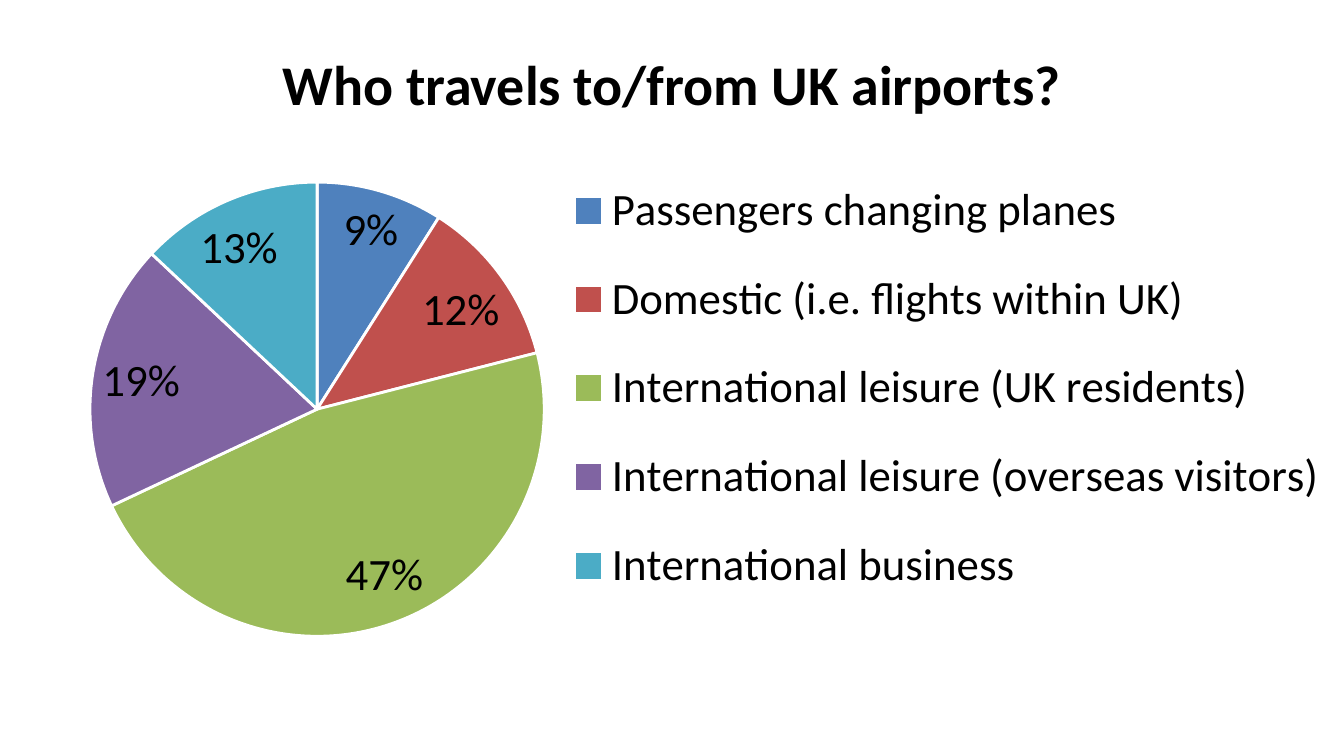
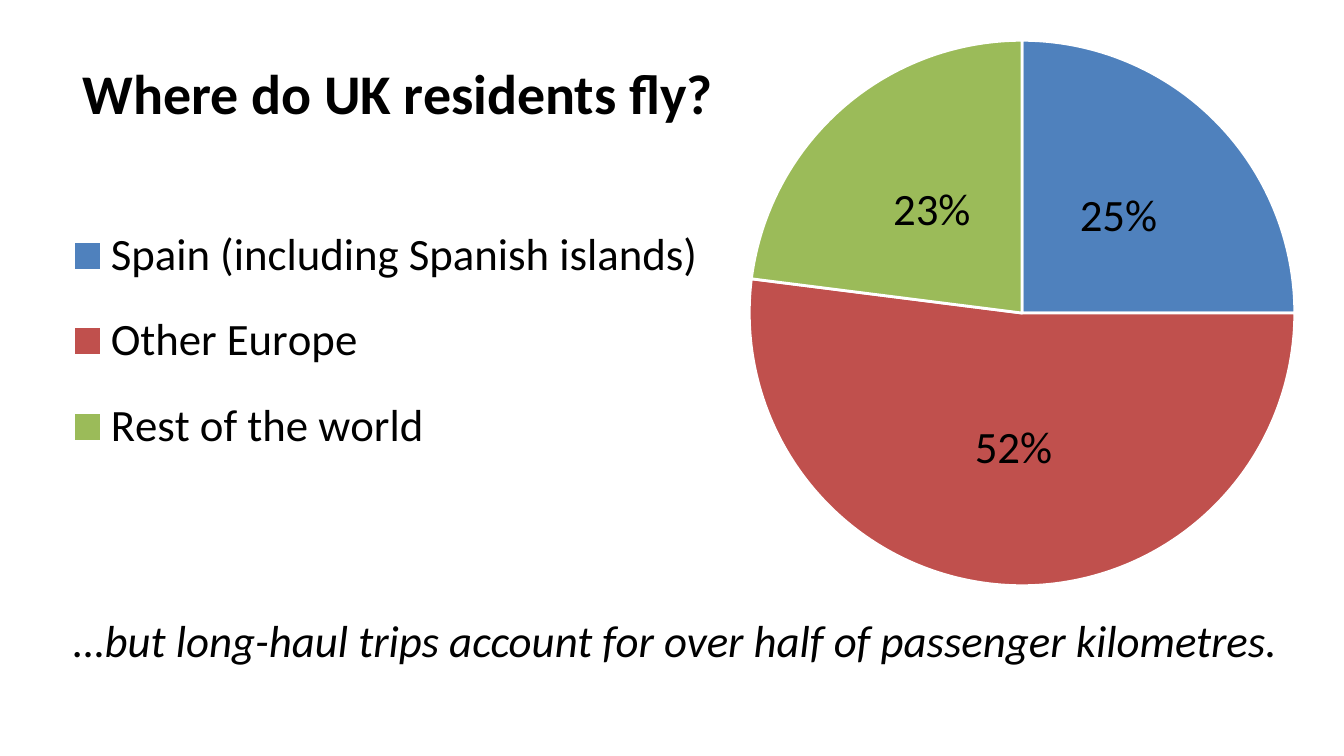
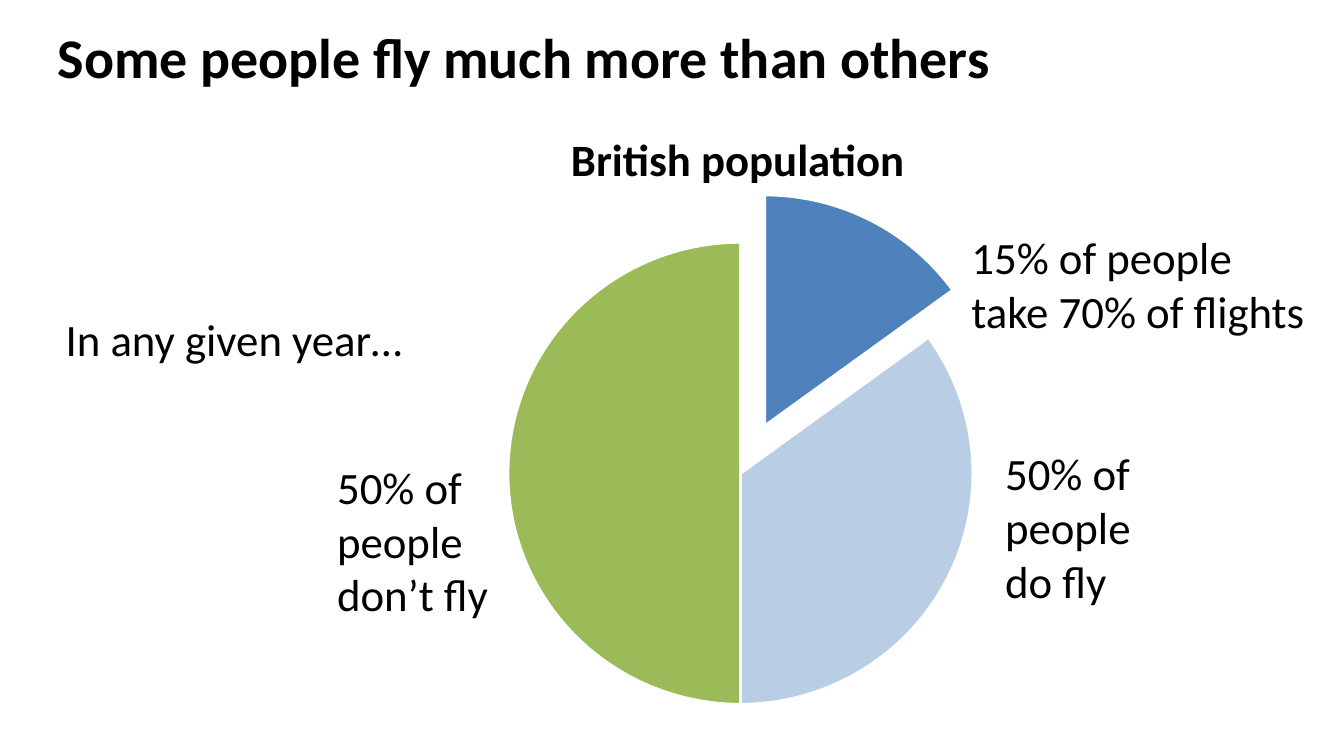
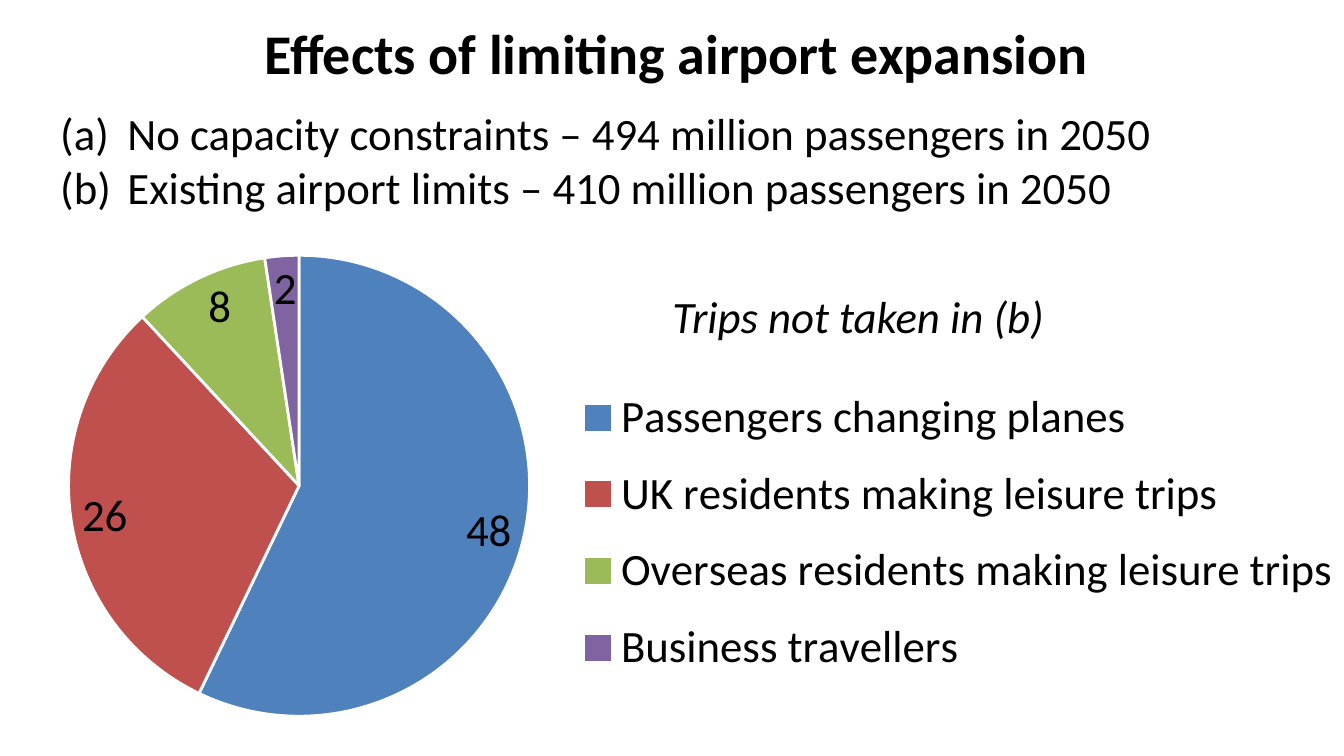
import pptx
import pptx.chart.data
import pptx.dml.color
import pptx.enum.chart
import pptx.enum.text
import pptx.oxml
import pptx.oxml.ns
import pptx.util
from lxml import etree

Inches = pptx.util.Inches
Pt = pptx.util.Pt
CENTER = pptx.enum.text.PP_ALIGN.CENTER
LEGEND = pptx.enum.chart.XL_LEGEND_POSITION
LABEL = pptx.enum.chart.XL_LABEL_POSITION

FONT = "Calibri"
BLACK, WHITE = "000000", "FFFFFF"
PALETTE = ["4F81BD", "C0504D", "9BBB59", "8064A2", "4BACC6"]
BODY, TITLE = 24, 30


def rgb(value):
    return pptx.dml.color.RGBColor.from_string(value)


def style_font(font, size=BODY, bold=False, italic=False):
    font.name = FONT
    font.size = Pt(size)
    font.bold = bold
    font.italic = italic
    font.color.rgb = rgb(BLACK)


def add_text(s, box, lines, align=None, numbered=False, **style):
    """Wrapped text box, one paragraph per line; numbered gives (a), (b)..."""
    tf = s.shapes.add_textbox(*map(Inches, box)).text_frame
    tf.word_wrap = True
    for i, line in enumerate(lines):
        p = tf.paragraphs[0] if i == 0 else tf.add_paragraph()
        p.alignment = align
        if numbered:
            pPr = p._p.get_or_add_pPr()
            pPr.set("marL", str(Inches(0.5)))
            pPr.set("indent", str(Inches(-0.5)))
            bullet = etree.SubElement(pPr, pptx.oxml.ns.qn("a:buAutoNum"))
            bullet.set("type", "alphaLcParenBoth")
        r = p.add_run()
        r.text = line
        style_font(r.font, **style)
    return tf


def add_title(s, box, text):
    tf = add_text(s, box, [text], CENTER, size=TITLE, bold=True)
    tf.vertical_anchor = pptx.enum.text.MSO_ANCHOR.MIDDLE


def set_layout(parent, index, chart_box, box, inner=False):
    """Fix a chart part at box, given in slide inches."""
    qn = pptx.oxml.ns.qn
    old = parent.find(qn("c:layout"))
    if old is not None:
        parent.remove(old)
    layout = etree.Element(qn("c:layout"))
    manual = etree.SubElement(layout, qn("c:manualLayout"))
    left, top, width, height = chart_box
    values = {
        "x": (box[0] - left) / width,
        "y": (box[1] - top) / height,
        "w": box[2] / width,
        "h": box[3] / height,
    }
    settings = [("layoutTarget", "inner")] if inner else []
    settings += [("xMode", "edge"), ("yMode", "edge")]
    settings += [(k, f"{v:.4f}") for k, v in values.items()]
    for tag, val in settings:
        etree.SubElement(manual, qn("c:" + tag)).set("val", val)
    parent.insert(index, layout)


def add_pie(s, box, plot_box, slices, colors=PALETTE):
    data = pptx.chart.data.CategoryChartData()
    data.categories = [name for name, _ in slices]
    data.add_series("Series 1", [value for _, value in slices])
    kind = pptx.enum.chart.XL_CHART_TYPE.PIE
    chart = s.shapes.add_chart(kind, *map(Inches, box), data).chart
    chart.has_title = False
    chart.has_legend = False
    style_font(chart.font)
    set_layout(chart._chartSpace.chart.plotArea, 0, box, plot_box, inner=True)
    for i in range(len(slices)):
        fmt = chart.plots[0].series[0].points[i].format
        fmt.fill.solid()
        fmt.fill.fore_color.rgb = rgb(colors[i])
        fmt.line.color.rgb = rgb(WHITE)
        fmt.line.width = Pt(1.5)
    return chart


def add_legend(chart, chart_box, box, position=LEGEND.RIGHT):
    chart.has_legend = True
    legend = chart.legend
    legend.position = position
    legend.include_in_layout = False
    style_font(legend.font)
    set_layout(legend._element, 1, chart_box, box)


def add_labels(chart, percent=True, position=LABEL.BEST_FIT):
    labels = chart.plots[0].series[0].data_labels
    labels.show_percentage = percent
    labels.show_value = not percent
    labels.show_legend_key = False
    labels.number_format = "0%" if percent else "General"
    labels.number_format_is_linked = False
    labels.position = position
    style_font(labels.font)


def travellers_slide(s):
    add_title(s, (0.5, 0.23, 9, 0.78), "Who travels to/from UK airports?")
    box = (0.01, 0.77, 10.22, 4.24)
    chart = add_pie(s, box, (0.67, 1.13, 3.38, 3.93), [
        ("Passengers changing planes", 9),
        ("Domestic (i.e. flights within UK)", 12),
        ("International leisure (UK residents)", 47),
        ("International leisure (overseas visitors)", 19),
        ("International business", 13),
    ])
    add_legend(chart, box, (4.19, 1.11, 5.71, 3.56))
    add_labels(chart)


def destinations_slide(s):
    add_title(s, (0.47, 0.42, 4.98, 0.53), "Where do UK residents fly?")
    add_text(s, (0.45, 4.51, 9.31, 0.5),
             ["…but long-haul trips account for over half of passenger kilometres."],
             italic=True)
    box = (0.24, 0.14, 9.52, 4.8)
    chart = add_pie(s, box, (5.57, 0.3, 4.07, 4.06), [
        ("Spain (including Spanish islands)", 25),
        ("Other Europe", 52),
        ("Rest of the world", 23),
    ])
    add_legend(chart, box, (0.47, 1.47, 4.8, 2.14), LEGEND.LEFT)
    add_labels(chart, position=LABEL.CENTER)


def frequent_flyers_slide(s):
    add_title(s, (0.3, 0.12, 7.2, 0.6), "Some people fly much more than others")
    chart = add_pie(s, (3.39, 1.44, 4.27, 4.1), (3.68, 1.78, 3.66, 3.46),
                    [("1", 15), ("2", 35), ("3", 50)],
                    [PALETTE[0], "B9CDE5", PALETTE[2]])
    # Pull out the slice of frequent flyers
    point = chart.plots[0].series[0]._element.find(pptx.oxml.ns.qn("c:dPt"))
    explosion = etree.Element(pptx.oxml.ns.qn("c:explosion"))
    explosion.set("val", "23")
    point.find(pptx.oxml.ns.qn("c:spPr")).addprevious(explosion)
    # Captions around the pie
    add_text(s, (4.15, 0.93, 2.76, 0.5), ["British population"], bold=True)
    for box, caption in [
        ((0.39, 2.27, 2.8, 0.5), "In any given year…"),
        ((2.41, 3.37, 1.48, 1.31), "50% of people don’t fly"),
        ((7.13, 1.66, 2.7, 0.91), "15% of people take 70% of flights"),
        ((7.38, 3.27, 1.48, 1.31), "50% of people do fly"),
    ]:
        add_text(s, box, [caption])


def expansion_slide(s):
    add_title(s, (0.42, 0.04, 9.23, 0.7), "Effects of limiting airport expansion")
    add_text(s, (0.35, 0.74, 9.37, 0.91), [
        "No capacity constraints – 494 million passengers in 2050",
        "Existing airport limits – 410 million passengers in 2050",
    ], numbered=True)
    box = (0.35, 1.65, 9.72, 3.74)
    chart = add_pie(s, box, (0.51, 1.9, 3.43, 3.43), [
        ("Passengers changing planes", 48),
        ("UK residents making leisure trips", 26),
        ("Overseas residents making leisure trips", 8),
        ("Business travellers", 2),
    ])
    add_legend(chart, box, (4.26, 2.74, 5.74, 2.45))
    add_labels(chart, percent=False)
    add_text(s, (4.76, 2.1, 3.25, 0.5), ["Trips not taken in (b)"], CENTER,
             italic=True)


def main():
    prs = pptx.Presentation()
    # 16:9 page
    prs.slide_width = Inches(10)
    prs.slide_height = prs.slide_width * 9 // 16
    for build in (travellers_slide, destinations_slide,
                  frequent_flyers_slide, expansion_slide):
        build(prs.slides.add_slide(prs.slide_layouts[6]))
    prs.save("out.pptx")


if __name__ == "__main__":
    main()
